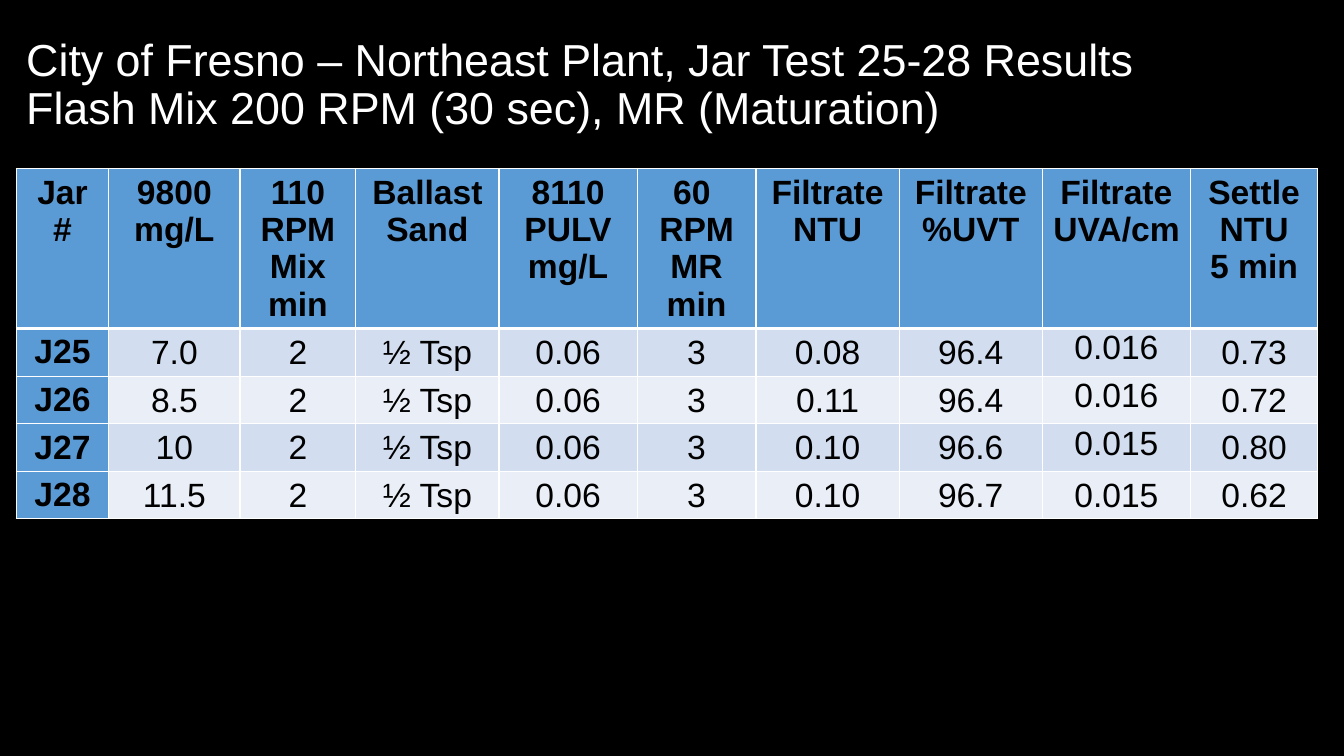
import dataclasses

import lxml.etree
import pptx
import pptx.dml.color
import pptx.enum.text
import pptx.oxml.ns
import pptx.util

Inches = pptx.util.Inches
Anchor = pptx.enum.text.MSO_ANCHOR
Align = pptx.enum.text.PP_ALIGN

SLIDE_WIDTH, SLIDE_HEIGHT = 13.33, 7.5
TITLE_BOX = (0.012, 0.017, 0.92, 0.193)
TABLE_BOX = (0.012, 0.223, 0.9685, 0.305)
COLUMN_WEIGHTS = (0.92, 1.3, 1.15, 1.42, 1.37, 1.18, 1.42, 1.42, 1.47, 1.26)
ROW_WEIGHTS = (0.65, 0.41, 0.41, 0.41, 0.41)
UVA_COLUMN = 8

TITLE = ("City of Fresno – Northeast Plant, Jar Test 25-28 Results\v"
         "Flash Mix 200 RPM (30 sec), MR (Maturation)")
ROWS = (
    ("Jar\v#", "9800\nmg/L", "110 RPM\nMix\nmin", "Ballast\nSand", "8110\nPULV\nmg/L",
     "60 \nRPM\nMR\nmin", "Filtrate\nNTU", "Filtrate\n%UVT", "Filtrate\nUVA/cm",
     "Settle\nNTU\n5 min"),
    ("J25", "7.0", "2", "½ Tsp", "0.06", "3", "0.08", "96.4", "0.016", "0.73"),
    ("J26", "8.5", "2", "½ Tsp", "0.06", "3", "0.11", "96.4", "0.016", "0.72"),
    ("J27", "10", "2", "½ Tsp", "0.06", "3", "0.10", "96.6", "0.015", "0.80"),
    ("J28", "11.5", "2", "½ Tsp", "0.06", "3", "0.10", "96.7", "0.015", "0.62"),
)


@dataclasses.dataclass(frozen=True)
class Theme:
    """Colours, type sizes and line widths of the slide."""
    font: str = "Arial"
    background: str = "000000"
    title: str = "FFFFFF"
    text: str = "000000"
    heading: str = "5B9BD5"
    bands: tuple = ("D2DEEF", "EAEFF7")
    border: str = "FFFFFF"
    title_size: int = 32
    table_size: int = 24
    thin: int = 1
    thick: int = 3


THEME = Theme()


def set_attributes(target, values):
    """Set each named attribute of the target."""
    for name, value in values.items():
        setattr(target, name, value)


def fill_solid(fill, color):
    """Fill with one colour."""
    fill.solid()
    fill.fore_color.rgb = pptx.dml.color.RGBColor.from_string(color)


def format_text(text_frame, size, color, bold, paragraph_values):
    """Format every paragraph of a text frame."""
    font_values = {"name": THEME.font, "size": pptx.util.Pt(size), "bold": bold}
    for paragraph in text_frame.paragraphs:
        set_attributes(paragraph, paragraph_values)
        for run in paragraph.runs:
            set_attributes(run.font, font_values)
            run.font.color.rgb = pptx.dml.color.RGBColor.from_string(color)


def scale_box(box):
    """Turn shares of the slide into lengths."""
    sides = (SLIDE_WIDTH, SLIDE_HEIGHT) * 2
    return [Inches(share * side) for share, side in zip(box, sides)]


def add_borders(cell, top, bottom):
    """Draw the four borders of a cell."""
    properties = cell._tc.get_or_add_tcPr()
    qualify = pptx.oxml.ns.qn
    widths = {"lnL": THEME.thin, "lnR": THEME.thin, "lnT": top, "lnB": bottom}
    for position, (tag, width) in enumerate(widths.items()):
        line = lxml.etree.Element(qualify("a:" + tag), w=str(pptx.util.Pt(width)))
        solid = lxml.etree.SubElement(line, qualify("a:solidFill"))
        lxml.etree.SubElement(solid, qualify("a:srgbClr"), val=THEME.border)
        properties.insert(position, line)


def add_title(slide, box):
    """Place the title in its box."""
    title = slide.shapes.title
    set_attributes(title, dict(zip(("left", "top", "width", "height"), scale_box(box))))
    title.text_frame.text = TITLE
    set_attributes(title.text_frame, {
        "word_wrap": True,
        "auto_size": pptx.enum.text.MSO_AUTO_SIZE.NONE,
        "vertical_anchor": Anchor.MIDDLE,
    })
    format_text(title.text_frame, THEME.title_size, THEME.title, False,
                {"alignment": Align.LEFT, "line_spacing": 0.9})


def format_cell(cell, row, column):
    """Format a cell as a heading or as a banded value."""
    heading = row == 0 or column == 0
    fill_solid(cell.fill, THEME.heading if heading else THEME.bands[(row - 1) % 2])
    if not heading:
        raised = column == UVA_COLUMN and row < len(ROWS) - 1
        set_attributes(cell, {
            "margin_left": Inches(0.01),
            "margin_top": Inches(0.01),
            "margin_right": Inches(0.01),
            "margin_bottom": 0,
            "vertical_anchor": Anchor.TOP if raised else Anchor.MIDDLE,
        })
    format_text(cell.text_frame, THEME.table_size, THEME.text, heading,
                {"alignment": Align.CENTER})
    add_borders(cell, THEME.thick if row == 1 else THEME.thin,
                THEME.thick if row == 0 else THEME.thin)


def add_results(slide, box):
    """Place the results table in its box."""
    left, top, width, height = scale_box(box)
    table = slide.shapes.add_table(len(ROWS), len(COLUMN_WEIGHTS),
                                   left, top, width, height).table
    table.first_col = True
    for column, weight in zip(table.columns, COLUMN_WEIGHTS):
        column.width = int(width * weight / sum(COLUMN_WEIGHTS))
    for row, weight in zip(table.rows, ROW_WEIGHTS):
        row.height = int(height * weight / sum(ROW_WEIGHTS))
    for row, values in enumerate(ROWS):
        for column, value in enumerate(values):
            cell = table.cell(row, column)
            cell.text_frame.text = value
            format_cell(cell, row, column)


def main():
    """Build and save the presentation."""
    presentation = pptx.Presentation()
    set_attributes(presentation, {"slide_width": Inches(SLIDE_WIDTH),
                                  "slide_height": Inches(SLIDE_HEIGHT)})
    slide = presentation.slides.add_slide(
        presentation.slide_layouts.get_by_name("Title Only"))
    fill_solid(slide.background.fill, THEME.background)
    add_title(slide, TITLE_BOX)
    add_results(slide, TABLE_BOX)
    presentation.save("out.pptx")


if __name__ == "__main__":
    main()
